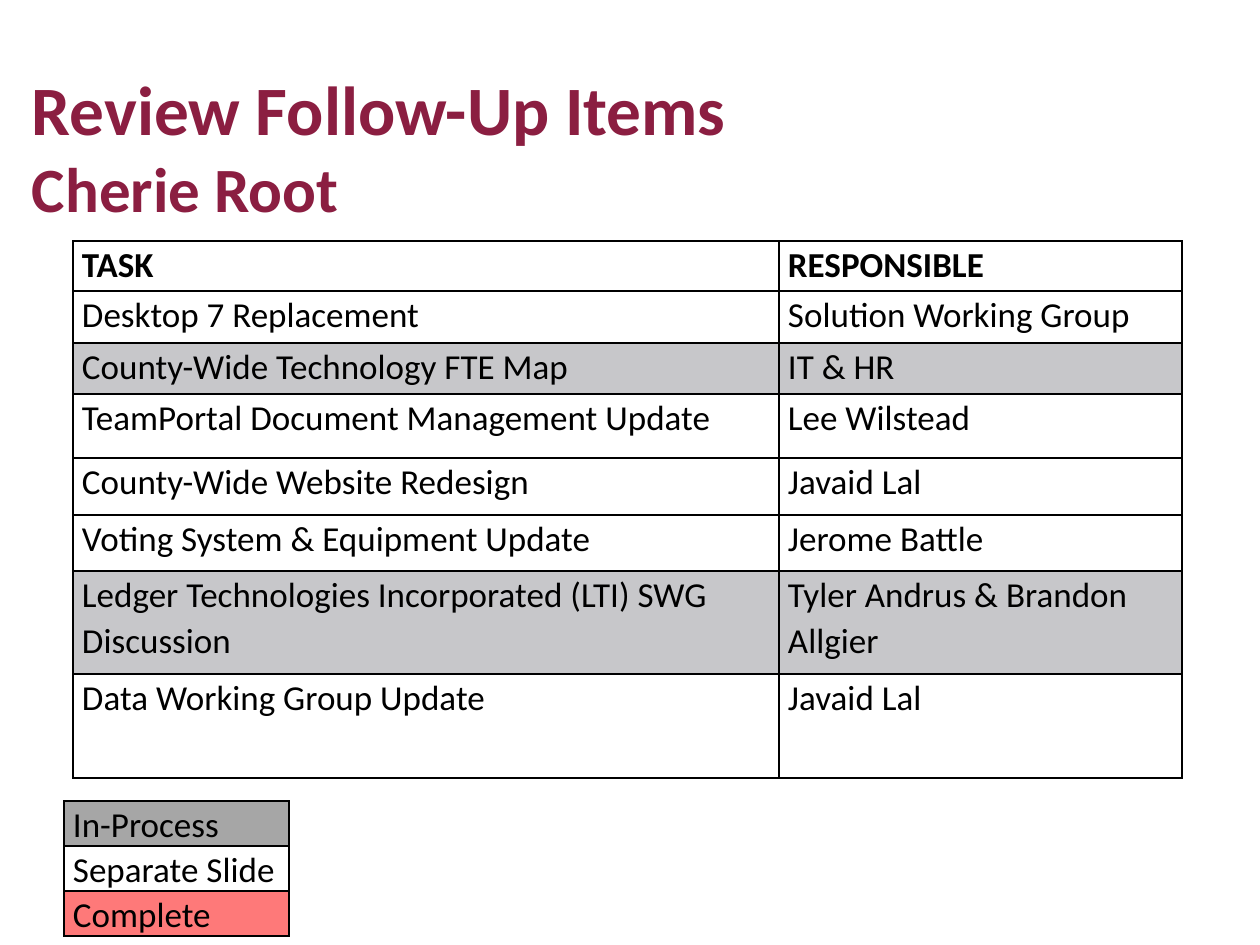
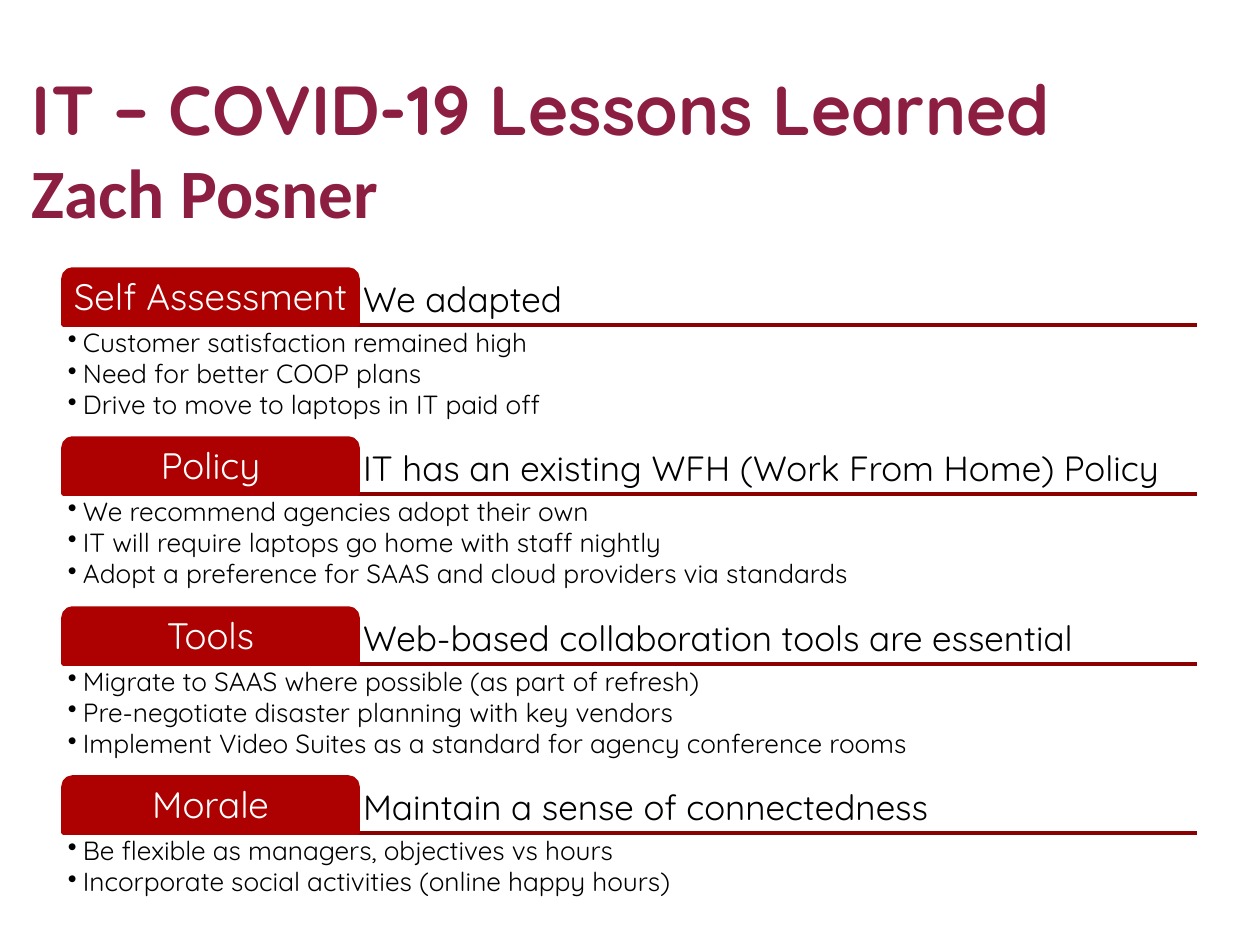
from lxml import etree
from pptx import Presentation
from pptx.dml.color import RGBColor
from pptx.enum.shapes import MSO_CONNECTOR, MSO_SHAPE
from pptx.enum.text import MSO_ANCHOR, PP_ALIGN
from pptx.oxml.ns import qn
from pptx.util import Emu, Pt

STRAIGHT = MSO_CONNECTOR.STRAIGHT
TAB_SHAPE = MSO_SHAPE.ROUND_2_SAME_RECTANGLE
TOP, MIDDLE, BOTTOM = MSO_ANCHOR.TOP, MSO_ANCHOR.MIDDLE, MSO_ANCHOR.BOTTOM
LEFT, CENTER = PP_ALIGN.LEFT, PP_ALIGN.CENTER

CALIBRI, QUICKSAND = "Calibri", "Quicksand"
MAROON, RED, DARK_RED = "8B1E41", "AD0101", "8B0101"
BLACK, WHITE, GRAY, MID_GRAY, PINK = "000000", "FFFFFF", "C7C7CA", "A6A6A6", "FE7979"

TABLE_FONT = dict(name=CALIBRI, size=Pt(20), color=BLACK, bold=False)
HEAD_FONT = dict(TABLE_FONT, bold=True)
LABEL_FONT = dict(name=QUICKSAND, size=Pt(21), color=WHITE)
SUMMARY_FONT = dict(name=QUICKSAND, size=Pt(20), color=BLACK)
BULLET_FONT = dict(name=QUICKSAND, size=Pt(15), color=BLACK)
TITLE_FONT = dict(size=Pt(39.6), color=MAROON, bold=True)

TASKS = [
    (50, WHITE, HEAD_FONT, "TASK", "RESPONSIBLE"),
    (52, WHITE, TABLE_FONT, "Desktop 7 Replacement", "Solution Working Group"),
    (51, GRAY, TABLE_FONT, "County-Wide Technology FTE Map", "IT & HR"),
    (64, WHITE, TABLE_FONT, "TeamPortal Document Management Update", "Lee Wilstead"),
    (57, WHITE, TABLE_FONT, "County-Wide Website Redesign", "Javaid Lal"),
    (56, WHITE, TABLE_FONT, "Voting System & Equipment Update", "Jerome Battle"),
    (103, GRAY, TABLE_FONT, "Ledger Technologies Incorporated (LTI) SWG Discussion",
     "Tyler Andrus & Brandon Allgier"),
    (104, WHITE, TABLE_FONT, "Data Working Group Update", "Javaid Lal"),
]
LEGEND = [
    (45, MID_GRAY, TABLE_FONT, "In-Process"),
    (45, WHITE, TABLE_FONT, "Separate Slide"),
    (45, PINK, TABLE_FONT, "Complete"),
]
LESSONS = [
    ("Self Assessment", "We adapted", [
        "Customer satisfaction remained high",
        "Need for better COOP plans",
        "Drive to move to laptops in IT paid off"]),
    ("Policy", "IT has an existing WFH (Work From Home) Policy", [
        "We recommend agencies adopt their own",
        "IT will require laptops go home with staff nightly",
        "Adopt a preference for SAAS and cloud providers via standards"]),
    ("Tools", "Web-based collaboration tools are essential", [
        "Migrate to SAAS where possible (as part of refresh)",
        "Pre-negotiate disaster planning with key vendors",
        "Implement Video Suites as a standard for agency conference rooms"]),
    ("Morale", "Maintain a sense of connectedness", [
        "Be flexible as managers, objectives vs hours",
        "Incorporate social activities (online happy hours)"]),
]


def px(n):
    return Emu(round(n * 914400 / 126))


def rgb(color):
    return RGBColor.from_string(color)


def set_font(font, fmt):
    for key, value in fmt.items():
        if key == "color":
            font.color.rgb = rgb(value)
        else:
            setattr(font, key, value)


class Deck:
    """Holds the presentation, its shared style and the current slide."""

    def __init__(self):
        self.prs = Presentation()
        self.prs.slide_width, self.prs.slide_height = px(1260), px(945)

    def slide(self):
        self.s = self.prs.slides.add_slide(self.prs.slide_layouts[6])

    def fill_text(self, tf, lines, fmt, anchor=TOP, align=LEFT, inset=5, after=0, bullet=False):
        tf.word_wrap, tf.vertical_anchor = True, anchor
        for side in ("left", "top", "right", "bottom"):
            setattr(tf, f"margin_{side}", px(inset))
        for i, line in enumerate(lines):
            p = tf.add_paragraph() if i else tf.paragraphs[0]
            p.alignment, p.line_spacing, p.space_after = align, 0.9, Pt(after)
            if bullet:
                pPr = p._p.get_or_add_pPr()
                pPr.set("marL", str(px(15)))
                pPr.set("indent", str(px(-15)))
                etree.SubElement(pPr, qn("a:buChar")).set("char", "•")
            r = p.add_run()
            r.text = line
            set_font(r.font, fmt)

    def text(self, x, y, w, h, lines, fmt, **layout):
        tf = self.s.shapes.add_textbox(px(x), px(y), px(w), px(h)).text_frame
        self.fill_text(tf, lines, fmt, **layout)
        return tf

    def title(self, heading, heading_font, presenter, presenter_size):
        tf = self.text(32, 63, 1134, 95, [heading, presenter], TITLE_FONT, inset=0)
        first, second = tf.paragraphs
        first.line_spacing, second.line_spacing = Pt(49.5), 1.0
        first.runs[0].font.name = heading_font
        set_font(second.runs[0].font, dict(name=CALIBRI, size=Pt(presenter_size)))

    def tab(self, x, y, w, h, label):
        sp = self.s.shapes.add_shape(TAB_SHAPE, px(x), px(y), px(w), px(h))
        sp.shadow.inherit = False
        sp.adjustments[0], sp.adjustments[1] = 0.17, 0
        sp.fill.solid()
        sp.fill.fore_color.rgb = sp.line.color.rgb = rgb(RED)
        sp.line.width = Pt(2)
        self.fill_text(sp.text_frame, [label], LABEL_FONT, anchor=MIDDLE, align=CENTER)

    def rule(self, x, y, w):
        line = self.s.shapes.add_connector(STRAIGHT, px(x), px(y), px(x + w), px(y))
        line.line.color.rgb, line.line.width = rgb(DARK_RED), Pt(2)
        etree.SubElement(line._element.spPr, qn("a:effectLst"))

    def border(self, cell):
        tcPr = cell._tc.get_or_add_tcPr()
        for i, edge in enumerate(("lnL", "lnR", "lnT", "lnB")):
            ln = etree.Element(qn(f"a:{edge}"), w=str(Pt(1)))
            fill = etree.SubElement(ln, qn("a:solidFill"))
            etree.SubElement(fill, qn("a:srgbClr"), val=BLACK)
            tcPr.insert(i, ln)

    def table(self, x, y, widths, rows):
        height = sum(row[0] for row in rows)
        frame = self.s.shapes.add_table(len(rows), len(widths), px(x), px(y),
                                        px(sum(widths)), px(height))
        table = frame.table
        table.first_row = table.horz_banding = False
        for column, width in zip(table.columns, widths):
            column.width = px(width)
        for row, (h, fill, fmt, *texts) in zip(table.rows, rows):
            row.height = px(h)
            for cell, text in zip(row.cells, texts):
                cell.margin_left = cell.margin_right = px(9)
                cell.margin_top = cell.margin_bottom = 0
                cell.fill.solid()
                cell.fill.fore_color.rgb = rgb(fill)
                self.border(cell)
                p = cell.text_frame.paragraphs[0]
                p.line_spacing = 1.07
                r = p.add_run()
                r.text = text
                set_font(r.font, fmt)

    def lesson(self, y, label, summary, points):
        self.rule(63, y + 56, 1134)
        self.text(358, y, 839, 56, [summary], SUMMARY_FONT, anchor=BOTTOM)
        self.tab(63, y, 295, 56, label)
        self.text(63, y + 56, 1134, 111, points, BULLET_FONT, after=1.6, bullet=True)


def main():
    deck = Deck()
    deck.slide()
    deck.title("Review Follow-Up Items", CALIBRI, "Cherie Root", 36)
    deck.table(73, 241, [706, 403], TASKS)
    deck.table(64, 801, [225], LEGEND)

    deck.slide()
    deck.title("IT – COVID-19 Lessons Learned", QUICKSAND, "Zach Posner", 39.6)
    for i, lesson in enumerate(LESSONS):
        deck.lesson(269 + 339 * i // 2, *lesson)
    deck.prs.save("out.pptx")


if __name__ == "__main__":
    main()
